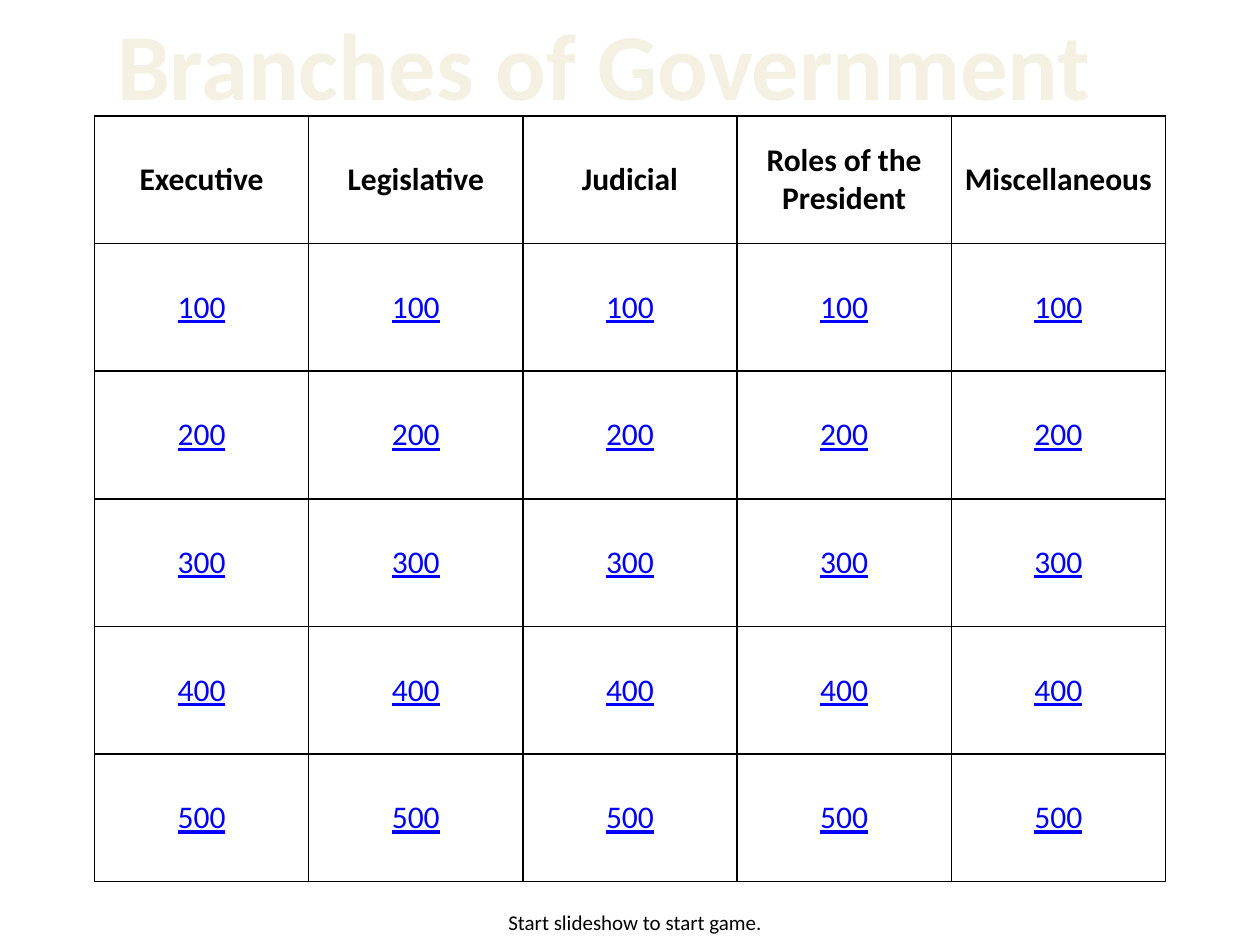
from lxml import etree
from pptx import Presentation
from pptx.dml.color import RGBColor
from pptx.enum.text import MSO_ANCHOR, MSO_AUTO_SIZE, PP_ALIGN
from pptx.oxml.ns import qn
from pptx.util import Pt

CENTER = PP_ALIGN.CENTER
MIDDLE = MSO_ANCHOR.MIDDLE
GROW = MSO_AUTO_SIZE.SHAPE_TO_FIT_TEXT

BLACK = RGBColor(0x00, 0x00, 0x00)
WHITE = RGBColor(0xFF, 0xFF, 0xFF)
LINK_BLUE = RGBColor(0x00, 0x00, 0xFF)
CREAM = RGBColor(0xF4, 0xF1, 0xE3)
NAVY = RGBColor(0x05, 0x46, 0x97)

TITLE = "Branches of Government"
CATEGORIES = ["Executive", "Legislative", "Judicial", "Roles of the President", "Miscellaneous"]
POINTS = ["100", "200", "300", "400", "500"]
HINT = "Start slideshow to start game."

PX = 914400 // 100
PAGE_SIZE = (1000, 750)
TITLE_AREA = (79, 0, 801, 101)
BOARD_AREA = (75, 92, 850, 608)
HINT_AREA = (83, 717, 842, 30)


def emu(lengths):
    return [length * PX for length in lengths]


def place(shape, area):
    shape.left, shape.top, shape.width, shape.height = emu(area)


def write(frame, text, size=18, color=BLACK, bold=False, underline=False):
    para = frame.paragraphs[0]
    para.alignment = CENTER
    span = para.add_run()
    span.text = text
    font = span.font
    font.name = "Calibri"
    font.size = Pt(size)
    font.bold = bold
    font.underline = underline
    font.color.rgb = color
    return span


def make_line(tag, color, width=1):
    line = etree.Element(qn(tag), w=str(Pt(width)))
    fill = etree.SubElement(line, qn("a:solidFill"))
    etree.SubElement(fill, qn("a:srgbClr"), val=str(color))
    return line


def fill_cell(cell, text, **style):
    cell.vertical_anchor = MIDDLE
    cell.fill.solid()
    cell.fill.fore_color.rgb = WHITE
    write(cell.text_frame, text, **style)
    properties = cell._tc.get_or_add_tcPr()
    for index, tag in enumerate(("a:lnL", "a:lnR", "a:lnT", "a:lnB")):
        properties.insert(index, make_line(tag, BLACK))


def add_board(page):
    rows = [CATEGORIES] + [[value] * len(CATEGORIES) for value in POINTS]
    board = page.shapes.add_table(len(rows), len(CATEGORIES), *emu(BOARD_AREA)).table
    for row_index, row in enumerate(rows):
        if row_index == 0:
            style = {"bold": True}
        else:
            style = {"color": LINK_BLUE, "underline": True}
        for column_index, text in enumerate(row):
            fill_cell(board.cell(row_index, column_index), text, **style)


def add_title(page):
    box = page.shapes.title
    place(box, TITLE_AREA)
    frame = box.text_frame
    frame.word_wrap = False
    frame.auto_size = GROW
    frame.vertical_anchor = MSO_ANCHOR.TOP
    span = write(frame, TITLE, size=54, color=CREAM, bold=True)
    span.font._element.insert(0, make_line("a:ln", NAVY))


def add_hint(page):
    frame = page.shapes.add_textbox(*emu(HINT_AREA)).text_frame
    frame.word_wrap = True
    frame.auto_size = GROW
    write(frame, HINT, size=12)


def main():
    deck = Presentation()
    deck.slide_width, deck.slide_height = emu(PAGE_SIZE)
    page = deck.slides.add_slide(deck.slide_layouts[5])
    add_board(page)
    add_title(page)
    add_hint(page)
    deck.save("out.pptx")


if __name__ == "__main__":
    main()
